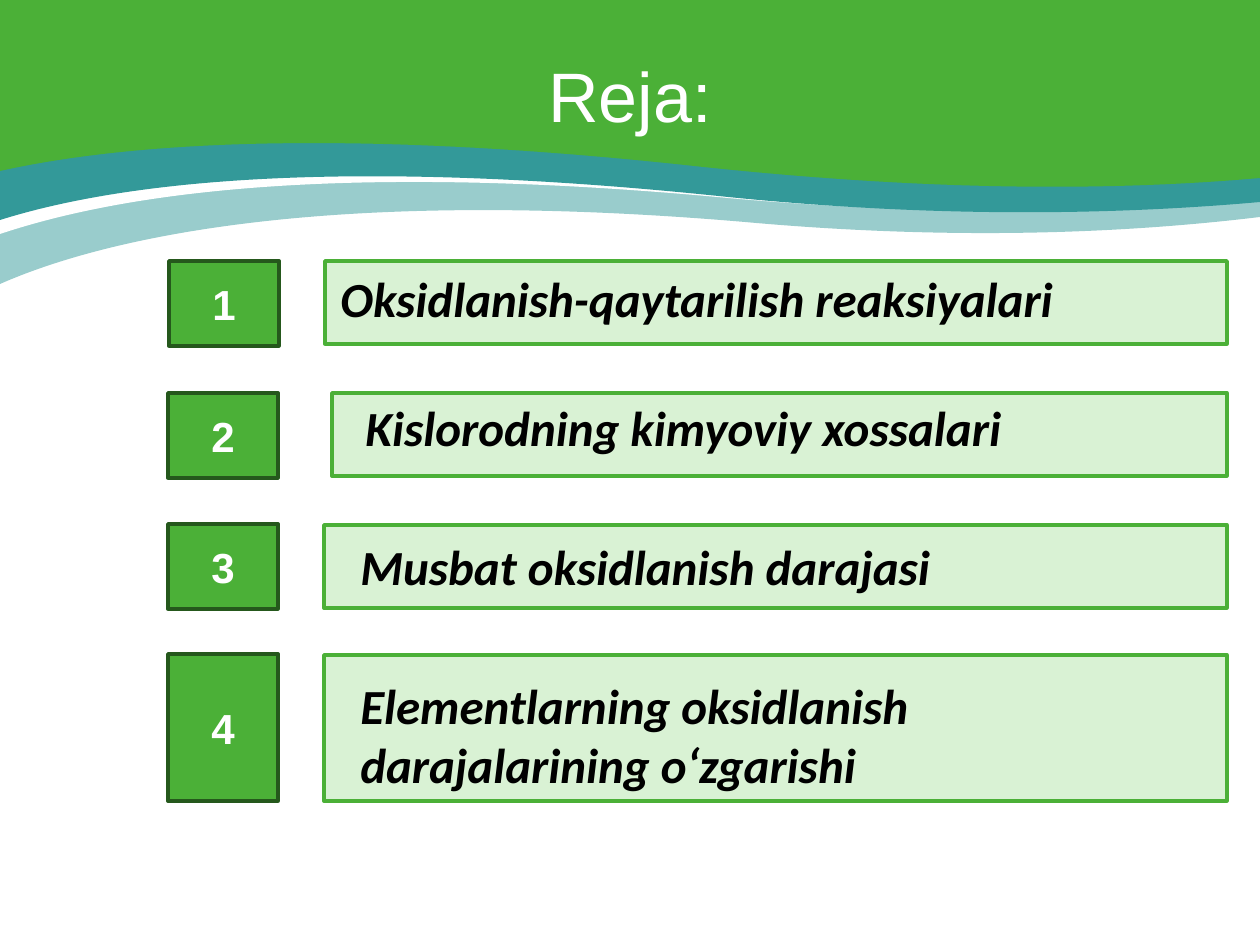
import lxml.etree
import pptx
import pptx.util
import pptx.dml.color
import pptx.enum.shapes
import pptx.enum.text
import pptx.oxml.ns

RGBColor = pptx.dml.color.RGBColor
GREEN = RGBColor(0x4B, 0xB0, 0x37)
DARK_GREEN = RGBColor(0x25, 0x58, 0x1C)
PALE_GREEN = RGBColor(0xD9, 0xF2, 0xD4)
TEAL = RGBColor(0x33, 0x99, 0x99)
PALE_TEAL = RGBColor(0x99, 0xCC, 0xCC)
WHITE = RGBColor(0xFF, 0xFF, 0xFF)
BLACK = RGBColor(0, 0, 0)

PX = 914400 / 126
WIDTH, HEIGHT = 1260, 945

TITLE = "Reja:"
# text, panel (left, top, height), badge (left, top, height),
# label (left, top, width, height)
ITEMS = [
    ("Oksidlanish-qaytarilish reaksiyalari",
     (325, 261, 83), (169, 261, 85), (328, 262, 776, 72)),
    ("Kislorodning kimyoviy xossalari",
     (332, 393, 83), (168, 393, 85), (353, 391, 808, 72)),
    ("Musbat oksidlanish darajasi",
     (324, 525, 83), (168, 524, 85), (348, 530, 630, 72)),
    ("Elementlarning oksidlanish darajalarining o‘zgarishi",
     (324, 655, 146), (168, 654, 147), (348, 669, 620, 131)),
]
PANEL_RIGHT = 1227
BADGE_WIDTH = 110

# Lower edge of each wave, right to left: two joined cubic curves
WAVES = [
    (PALE_TEAL, [(1260, 217), (1128, 233), (956, 241), (745, 222),
                 (323, 186), (102, 239), (0, 284)]),
    (WHITE, [(1260, 195), (1126, 210), (948, 218), (728, 198),
             (312, 159), (105, 199), (0, 234)]),
    (TEAL, [(1260, 202), (1125, 214), (946, 219), (728, 197),
            (319, 154), (108, 186), (0, 220)]),
    (GREEN, [(1260, 178), (1123, 190), (940, 193), (685, 165),
             (318, 126), (112, 146), (0, 171)]),
]


def emu(*lengths):
    return [round(length * PX) for length in lengths]


def bend(lines):
    """Turn three straight segments into one cubic curve."""
    curve = lxml.etree.Element(pptx.oxml.ns.qn("a:cubicBezTo"))
    lines[0].addprevious(curve)
    for line in lines:
        curve.append(line[0])
        line.getparent().remove(line)


def add_wave(slide, color, edge):
    builder = slide.shapes.build_freeform(0, 0)
    builder.add_line_segments([emu(*point) for point in [(WIDTH, 0)] + edge])
    wave = builder.convert_to_shape()
    lines = list(wave.element.iter(pptx.oxml.ns.qn("a:lnTo")))
    bend(lines[2:5])
    bend(lines[5:8])
    wave.shadow.inherit = False
    wave.fill.solid()
    wave.fill.fore_color.rgb = color
    wave.line.fill.background()


def add_rectangle(slide, place, fill, line):
    box = slide.shapes.add_shape(
        pptx.enum.shapes.MSO_SHAPE.RECTANGLE, *emu(*place))
    box.shadow.inherit = False
    box.fill.solid()
    box.fill.fore_color.rgb = fill
    box.line.color.rgb = line
    box.line.width = pptx.util.Pt(2)
    return box


def write(box, text, font, size, color, bold=False, italic=False, centered=False):
    frame = box.text_frame
    frame.word_wrap = True
    frame.text = text
    para = frame.paragraphs[0]
    if centered:
        frame.vertical_anchor = pptx.enum.text.MSO_ANCHOR.MIDDLE
        para.alignment = pptx.enum.text.PP_ALIGN.CENTER
    span = para.runs[0]
    span.font.name = font
    span.font.size = pptx.util.Pt(size)
    span.font.bold = bold
    span.font.italic = italic
    span.font.color.rgb = color


def main():
    deck = pptx.Presentation()
    deck.slide_width, deck.slide_height = emu(WIDTH, HEIGHT)
    slide = deck.slides.add_slide(deck.slide_layouts[6])

    # Header waves and title
    for color, edge in WAVES:
        add_wave(slide, color, edge)
    title = slide.shapes.add_textbox(*emu(63, 10, 1134, 168))
    write(title, TITLE, "Arial", 40, WHITE, centered=True)

    # Numbered plan
    for number, (text, panel, badge, label_place) in enumerate(ITEMS, 1):
        left, top, height = panel
        add_rectangle(slide, (left, top, PANEL_RIGHT - left, height),
                      PALE_GREEN, GREEN)
        left, top, height = badge
        badge_box = add_rectangle(slide, (left, top, BADGE_WIDTH, height),
                                  GREEN, DARK_GREEN)
        write(badge_box, str(number), "Arial", 24, WHITE, bold=True, centered=True)
        label = slide.shapes.add_textbox(*emu(*label_place))
        write(label, text, "Calibri", 28, BLACK, bold=True, italic=True)

    deck.save("out.pptx")


if __name__ == "__main__":
    main()
